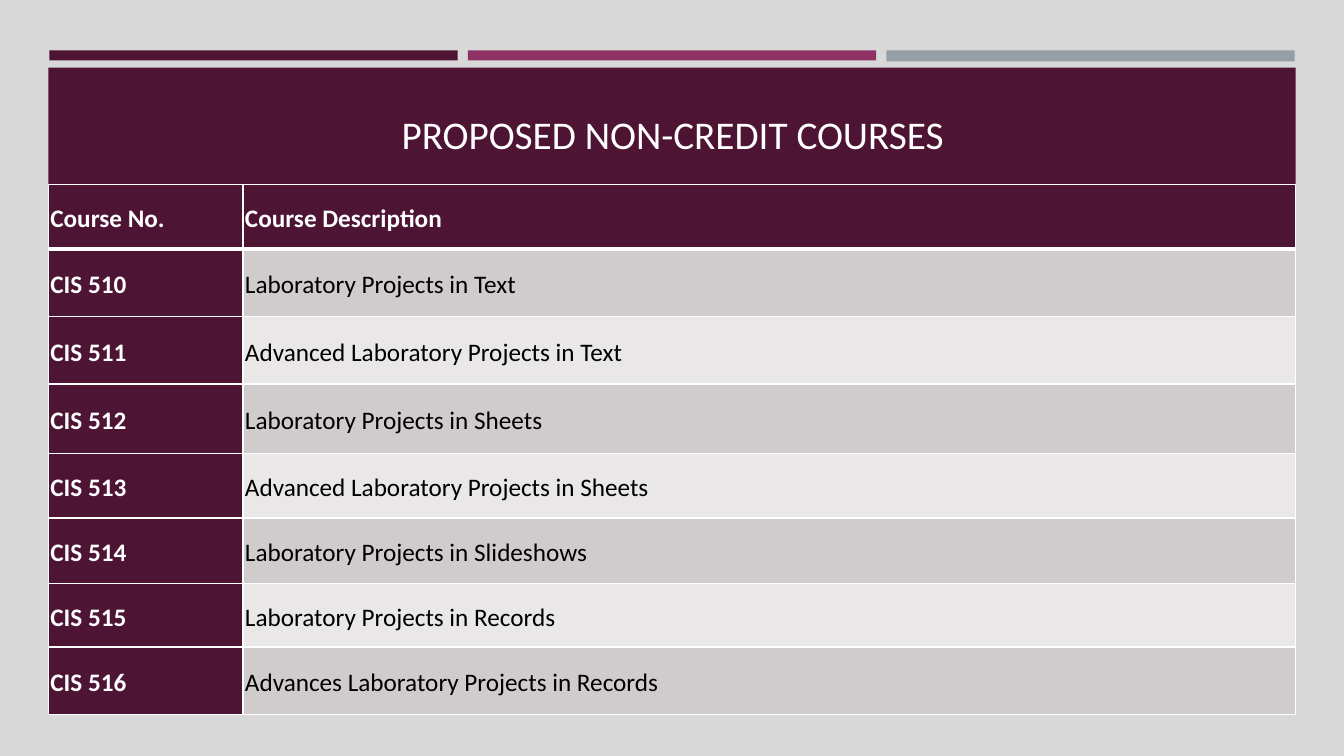
from pptx import Presentation
from pptx.dml.color import RGBColor
from pptx.enum.shapes import MSO_SHAPE
from pptx.enum.text import MSO_ANCHOR, PP_ALIGN
from pptx.oxml import parse_xml
from pptx.oxml.ns import nsdecls
from pptx.util import Inches, Pt

PLUM, WHITE, BLACK = "4D1434", "FFFFFF", "000000"
BAND_COLORS = ["E9E7E8", "D0CCCE"]


def paint(fill, color):
    fill.solid()
    fill.fore_color.rgb = RGBColor.from_string(color)


def write(frame, text, size, color, bold=False):
    paragraph = frame.paragraphs[0]
    run = paragraph.add_run()
    run.text = text
    for name, value in {"name": "Calibri", "size": Pt(size), "bold": bold}.items():
        setattr(run.font, name, value)
    run.font.color.rgb = RGBColor.from_string(color)
    return paragraph


prs = Presentation()
prs.slide_width, prs.slide_height = Inches(13.33), Inches(7.5)
slide = prs.slides.add_slide(prs.slide_layouts[6])
paint(slide.background.fill, "D8D8D8")

bars = [
    (0.49, 0.5, 4.05, 0.1, PLUM),
    (8.79, 0.5, 4.05, 0.11, "969FA7"),
    (4.64, 0.5, 4.05, 0.1, "903163"),
    (0.48, 0.67, 12.37, 1.3, PLUM),
]
for *place, color in bars:
    bar = slide.shapes.add_shape(MSO_SHAPE.RECTANGLE, *map(Inches, place))
    bar.shadow.inherit = False
    paint(bar.fill, color)
    bar.line.fill.background()

title = slide.shapes.add_textbox(Inches(0.64), Inches(0.77), Inches(12.06), Inches(1.11))
title.text_frame.word_wrap = True
title.text_frame.vertical_anchor = MSO_ANCHOR.MIDDLE
write(title.text_frame, "PROPOSED NON-CREDIT COURSES", 28, WHITE).alignment = PP_ALIGN.CENTER

courses = [
    ("Course No.", "Course Description"),
    ("CIS 510", "Laboratory Projects in Text"),
    ("CIS 511", "Advanced Laboratory Projects in Text"),
    ("CIS 512", "Laboratory Projects in Sheets"),
    ("CIS 513", "Advanced Laboratory Projects in Sheets"),
    ("CIS 514", "Laboratory Projects in Slideshows"),
    ("CIS 515", "Laboratory Projects in Records"),
    ("CIS 516", "Advances Laboratory Projects in Records"),
]
column_widths = [1.93, 10.44]
row_heights = [0.64, 0.67, 0.67, 0.69, 0.64, 0.65, 0.63, 0.67]
table = slide.shapes.add_table(
    len(courses), len(column_widths), Inches(0.48), Inches(1.83), Inches(12.37), Inches(5.27)
).table
for column, width in zip(table.columns, column_widths):
    column.width = Inches(width)
for row, height in zip(table.rows, row_heights):
    row.height = Inches(height)

cell_format = {
    "vertical_anchor": MSO_ANCHOR.MIDDLE,
    "margin_left": Inches(0.02),
    "margin_right": Inches(0.02),
    "margin_top": 0,
    "margin_bottom": 0,
}
for r, course in enumerate(courses):
    borders = {"lnL": 1, "lnR": 1, "lnT": 3 if r == 1 else 1, "lnB": 3 if r == 0 else 1}
    for c, text in enumerate(course):
        cell = table.cell(r, c)
        for name, value in cell_format.items():
            setattr(cell, name, value)
        heading = r == 0 or c == 0
        write(cell.text_frame, text, 18, WHITE if heading else BLACK, heading).line_spacing = 1.15
        properties = cell._tc.get_or_add_tcPr()
        for side, width in borders.items():
            properties.append(parse_xml(
                f'<a:{side} {nsdecls("a")} w="{Pt(width)}"><a:solidFill>'
                f'<a:srgbClr val="{WHITE}"/></a:solidFill></a:{side}>'
            ))
        paint(cell.fill, PLUM if heading else BAND_COLORS[r % 2])

prs.save("out.pptx")
